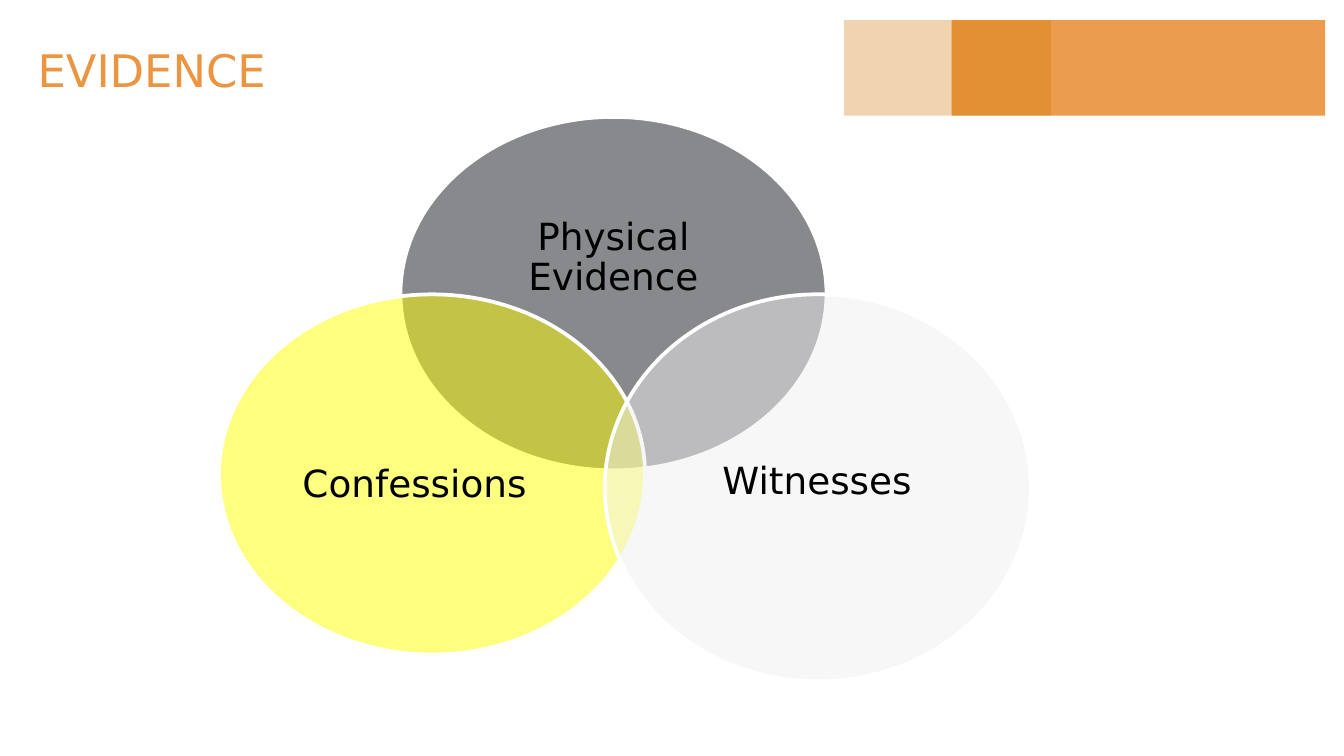
import dataclasses

import pptx
import pptx.dml.color
import pptx.enum.shapes
import pptx.enum.text
import pptx.oxml
import pptx.oxml.ns
import pptx.util
from pptx.util import Inches

SHAPE = pptx.enum.shapes.MSO_SHAPE
ANCHOR = pptx.enum.text.MSO_ANCHOR
ALIGN = pptx.enum.text.PP_ALIGN


@dataclasses.dataclass(frozen=True)
class Theme:
    font: str = "DejaVu Sans"
    title_size: int = 24
    label_size: int = 20
    outline_width: int = 2
    orange: str = "EB9540"
    dark_orange: str = "D07700"
    black: str = "000000"
    white: str = "FFFFFF"
    ink: str = "11151A"
    yellow: str = "FFFF00"
    pale_gray: str = "F1F0F0"


THEME = Theme()


def rgb(color):
    return pptx.dml.color.RGBColor.from_string(color)


def add_filled_shape(shapes, kind, box, color, opacity):
    """Add a shadowless shape without outline; opacity is in percent."""
    shape = shapes.add_shape(kind, *map(Inches, box))
    shape.shadow.inherit = False
    shape.fill.solid()
    shape.fill.fore_color.rgb = rgb(color)
    shape.line.fill.background()
    color_element = shape.element.spPr.find(".//" + pptx.oxml.ns.qn("a:srgbClr"))
    alpha = pptx.oxml.parse_xml(
        f'<a:alpha {pptx.oxml.ns.nsdecls("a")} val="{opacity * 1000}"/>')
    color_element.append(alpha)
    return shape


def write_text(frame, text, size, color, align, inset):
    frame.text = text
    frame.word_wrap = True
    frame.auto_size = pptx.enum.text.MSO_AUTO_SIZE.NONE
    frame.vertical_anchor = ANCHOR.MIDDLE
    frame.margin_left = frame.margin_right = Inches(inset)
    frame.margin_top = frame.margin_bottom = Inches(inset)
    paragraph = frame.paragraphs[0]
    paragraph.alignment = align
    font = paragraph.runs[0].font
    font.name = THEME.font
    font.size = pptx.util.Pt(size)
    font.color.rgb = rgb(color)


def add_corner_band(slide, box):
    """Two translucent bars whose overlap forms the darker middle block."""
    left, top, width, height = box
    long_bar, short_bar = 2.78, 1.54
    add_filled_shape(slide.shapes, SHAPE.RECTANGLE,
                     (left + width - long_bar, top, long_bar, height),
                     THEME.orange, 93)
    add_filled_shape(slide.shapes, SHAPE.RECTANGLE,
                     (left, top, short_bar, height), THEME.dark_orange, 31)


def place_title(slide, text, box):
    title = slide.shapes.title
    title.left, title.top, title.width, title.height = map(Inches, box)
    write_text(title.text_frame, text, THEME.title_size, THEME.orange,
               ALIGN.LEFT, 0.1)


def add_venn_set(slide, box, color, label, label_box):
    """One translucent ellipse; label_box is relative to the ellipse box."""
    group = slide.shapes.add_group_shape()
    ellipse = add_filled_shape(group.shapes, SHAPE.OVAL, box, color, 50)
    ellipse.line.color.rgb = rgb(THEME.white)
    ellipse.line.width = pptx.util.Pt(THEME.outline_width)

    dx, dy, width, height = label_box
    caption = group.shapes.add_textbox(
        *map(Inches, (box[0] + dx, box[1] + dy, width, height)))
    write_text(caption.text_frame, label, THEME.label_size, THEME.black,
               ALIGN.CENTER, 0)
    caption.text_frame.paragraphs[0].line_spacing = 0.9


def add_venn(slide, box):
    left, top, width, _ = box
    set_width = 3.17
    sets = [
        ("Physical Evidence", THEME.ink, (1.35, 0, 2.63), (0.42, 0.46, 2.33, 1.18)),
        ("Confessions", THEME.yellow, (0, 1.32, 2.68), (0.3, 0.69, 2.31, 1.47)),
        ("Witnesses", THEME.pale_gray, (width - set_width, 1.32, 2.88),
         (0.63, 0.61, 1.9, 1.58)),
    ]
    for label, color, (dx, dy, height), label_box in sets:
        add_venn_set(slide, (left + dx, top + dy, set_width, height),
                     color, label, label_box)


def main():
    deck = pptx.Presentation()
    deck.slide_width = Inches(10)
    deck.slide_height = deck.slide_width * 9 // 16
    slide = deck.slides.add_slide(deck.slide_layouts.get_by_name("Title Only"))
    add_corner_band(slide, (6.28, 0.15, 3.58, 0.71))
    place_title(slide, "EVIDENCE", (0.18, 0.05, 9, 0.94))
    add_venn(slide, (1.63, 0.87, 6.04, 4.2))
    deck.save("out.pptx")


if __name__ == "__main__":
    main()
